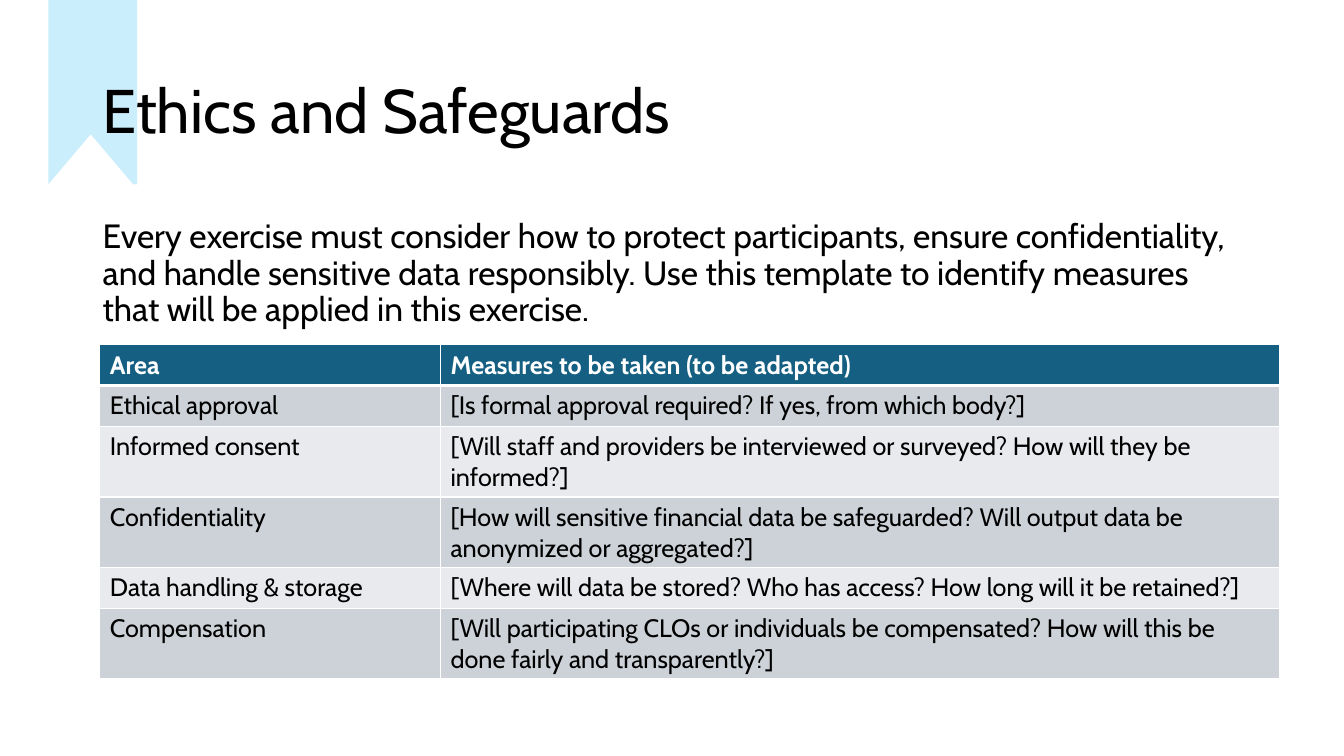
from lxml.etree import SubElement
from pptx import Presentation
from pptx.dml.color import RGBColor
from pptx.enum.shapes import MSO_SHAPE
from pptx.enum.text import MSO_ANCHOR, PP_ALIGN
from pptx.oxml.ns import qn
from pptx.util import Inches, Pt

COLORS = {
    "ribbon": "CAEEFB",
    "white": "FFFFFF",
    "ink": "000000",
    "header": "156082",
    "odd": "CCD2D8",
    "even": "E8EAED",
}
MEASURES = [
    ("Area", "Measures to be taken (to be adapted)"),
    ("Ethical approval", "[Is formal approval required? If yes, from which body?]"),
    ("Informed consent", "[Will staff and providers be interviewed or surveyed? "
     "How will they be informed?]"),
    ("Confidentiality", "[How will sensitive financial data be safeguarded? "
     "Will output data be anonymized or aggregated?]"),
    ("Data handling & storage", "[Where will data be stored? Who has access? "
     "How long will it be retained?]"),
    ("Compensation", "[Will participating CLOs or individuals be compensated? "
     "How will this be done fairly and transparently?]"),
]
INTRO = ("Every exercise must consider how to protect participants, ensure "
         "confidentiality, and handle sensitive data responsibly. Use this template "
         "to identify measures that will be applied in this exercise.")
ONE_LINE, TWO_LINES = 5.4, 9.33


class SlideBuilder:
    """Draws styled elements on a grid of 100 columns by 100 rows."""

    font = "Cabin"

    def __init__(self, deck):
        self.slide = deck.slides.add_slide(deck.slide_layouts[5])
        self.column = deck.slide_width / 100
        self.row = deck.slide_height / 100

    def place(self, left, top, width, height):
        return (round(left * self.column), round(top * self.row),
                round(width * self.column), round(height * self.row))

    def color(self, name):
        return RGBColor.from_string(COLORS[name])

    def set_text(self, frame, text, size, color="ink", bold=False, spacing=None):
        frame.text = text
        frame.word_wrap = True
        paragraph = frame.paragraphs[0]
        paragraph.alignment = PP_ALIGN.LEFT
        paragraph.line_spacing = spacing
        paragraph.font.name = self.font
        paragraph.font.size = Pt(size)
        paragraph.font.bold = bold
        paragraph.font.color.rgb = self.color(color)

    def shape(self, kind, box, fill, line_width=0):
        drawn = self.slide.shapes.add_shape(kind, *self.place(*box))
        drawn.shadow.inherit = False
        drawn.fill.solid()
        drawn.fill.fore_color.rgb = self.color(fill)
        if line_width:
            drawn.line.color.rgb = self.color(fill)
            drawn.line.width = Pt(line_width)
        else:
            drawn.line.fill.background()

    def title(self, text, box):
        heading = self.slide.shapes.title
        heading.left, heading.top, heading.width, heading.height = self.place(*box)
        heading.text_frame.vertical_anchor = MSO_ANCHOR.MIDDLE
        self.set_text(heading.text_frame, text, 44, spacing=0.9)
        tree = self.slide.shapes.element
        tree.remove(heading.element)
        tree.append(heading.element)

    def text(self, text, box):
        frame = self.slide.shapes.add_textbox(*self.place(*box)).text_frame
        frame.vertical_anchor = MSO_ANCHOR.MIDDLE
        self.set_text(frame, text, 24, spacing=0.9)

    def borders(self, cell, is_header, below_header):
        properties = cell._tc.get_or_add_tcPr()
        widths = {"lnL": 1, "lnR": 1, "lnT": 3 if below_header else 1,
                  "lnB": 3 if is_header else 1}
        for edge, width in widths.items():
            line = SubElement(properties, qn(f"a:{edge}"), w=str(Pt(width)))
            fill = SubElement(line, qn("a:solidFill"))
            SubElement(fill, qn("a:srgbClr"), val=COLORS["white"])

    def table(self, rows, left, top, widths, heights):
        box = self.place(left, top, sum(widths), sum(heights))
        table = self.slide.shapes.add_table(len(rows), len(widths), *box).table
        for column, width in zip(table.columns, widths):
            column.width = round(width * self.column)
        for index, (entries, height) in enumerate(zip(rows, heights)):
            table.rows[index].height = round(height * self.row)
            is_header = index == 0
            band = "header" if is_header else ("odd" if index % 2 else "even")
            for cell, entry in zip(table.rows[index].cells, entries):
                self.set_text(cell.text_frame, entry, 18,
                              "white" if is_header else "ink", is_header)
                self.borders(cell, is_header, index == 1)
                cell.fill.solid()
                cell.fill.fore_color.rgb = self.color(band)


def main():
    deck = Presentation()
    deck.slide_width, deck.slide_height = Inches(13.33), Inches(7.5)
    ethics = SlideBuilder(deck)
    ethics.shape(MSO_SHAPE.RECTANGLE, (3.6, 0, 6.6, 24.4), "ribbon")
    ethics.shape(MSO_SHAPE.ISOSCELES_TRIANGLE, (3, 18, 7.5, 7.87), "white", 1.5)
    ethics.title("Ethics and Safeguards", (6.9, 5.33, 86.25, 19.33))
    ethics.text(INTRO, (6.9, 28.27, 86.25, 16))
    ethics.table(MEASURES, 7.43, 45.6, (25.35, 62.4),
                 (ONE_LINE, ONE_LINE, TWO_LINES, TWO_LINES, ONE_LINE, TWO_LINES))
    deck.save("out.pptx")


if __name__ == "__main__":
    main()
